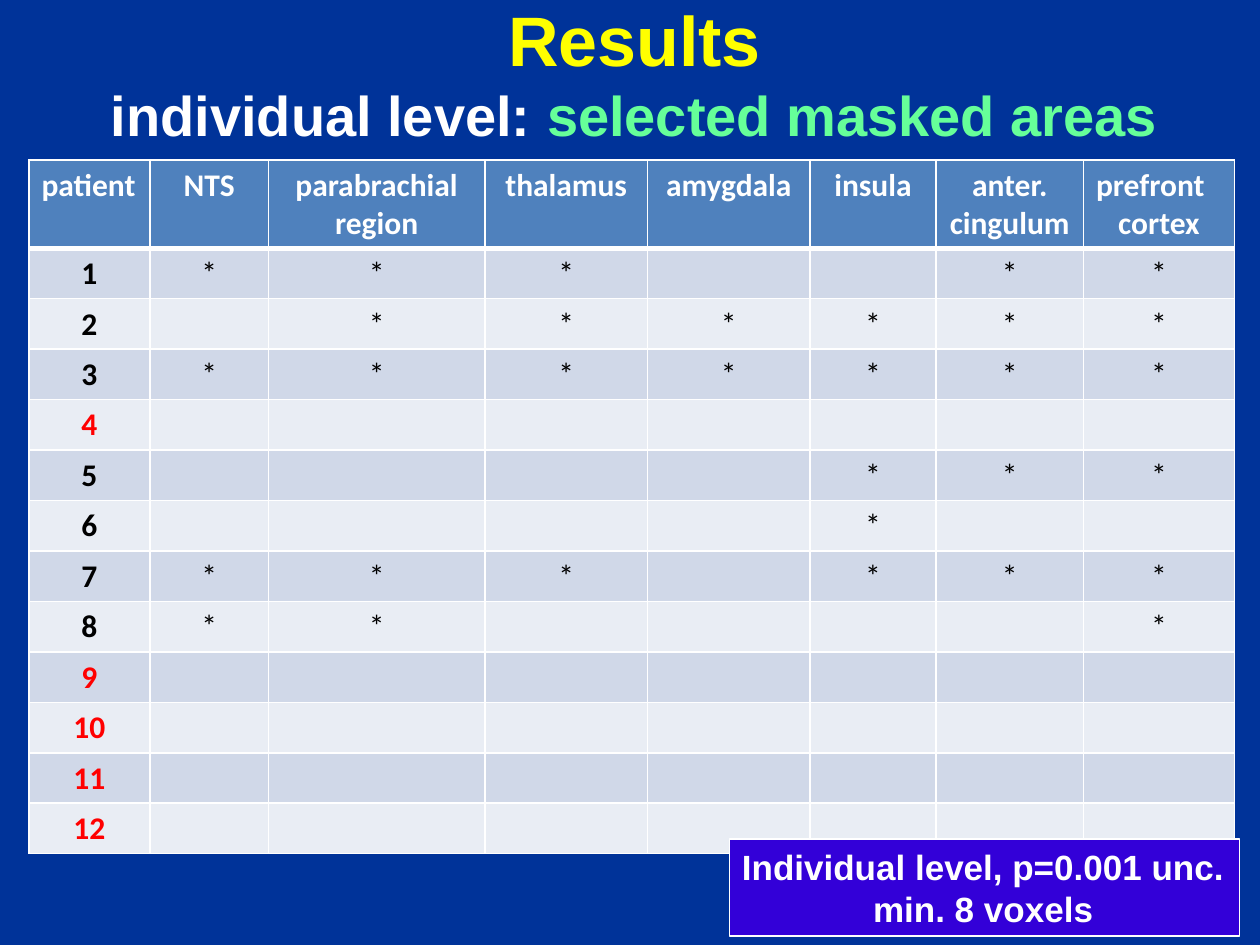
import pptx
import pptx.util
import pptx.dml.color
import pptx.enum.text
import pptx.enum.shapes
import pptx.oxml
import pptx.oxml.ns

# Grid: 100 columns by 75 rows, each a tenth of an inch
UNIT = pptx.util.Inches(0.1)
COLS, ROWS = 100, 75

HUES = {
    "back": "003399", "title": "FFFF00", "white": "FFFFFF",
    "mint": "66FF99", "head": "4F81BD", "odd": "D0D8E8",
    "even": "E9EDF4", "black": "000000", "red": "FF0000",
    "note": "3300D8",
}
ALIGN = pptx.enum.text.PP_ALIGN
ANCHOR = pptx.enum.text.MSO_ANCHOR
SIZING = pptx.enum.text.MSO_AUTO_SIZE

HEADS = ["patient", "NTS", "parabrachial\nregion", "thalamus", "amygdala",
         "insula", "anter.\ncingulum", "prefront\ncortex"]
WIDTHS = [9.6, 9.4, 17.2, 12.9, 12.9, 10, 11.7, 12]
# Columns with a star, for each patient
STARS = {1: [1, 2, 3, 6, 7], 2: [2, 3, 4, 5, 6, 7], 3: [1, 2, 3, 4, 5, 6, 7],
         5: [5, 6, 7], 6: [5], 7: [1, 2, 3, 5, 6, 7], 8: [1, 2, 7]}
COUNT = 12
NONE = [4, 9, 10, 11, 12]
LEFT = ["patient", "prefront"]


def grid(*spans):
    return [round(span * UNIT) for span in spans]


def shade(hue):
    return pptx.dml.color.RGBColor.from_string(HUES[hue])


def apply(item, values):
    for name, value in values.items():
        setattr(item, name, value)


def write(para, text, hue, **values):
    run = para.add_run()
    run.text = text
    apply(run.font, values)
    run.font.color.rgb = shade(hue)


def paint(fill, hue):
    fill.solid()
    fill.fore_color.rgb = shade(hue)


def edge(cell, **widths):
    """Draw white cell borders, widths in points."""
    props = cell._tc.get_or_add_tcPr()
    for side in ("L", "R", "T", "B"):
        wide = pptx.util.Pt(widths.get(side, 1))
        props.append(pptx.oxml.parse_xml(
            f'<a:ln{side} {pptx.oxml.ns.nsdecls("a")} w="{wide}"><a:solidFill>'
            f'<a:srgbClr val="{HUES["white"]}"/></a:solidFill></a:ln{side}>'))


def title(slide, box):
    frame = slide.shapes.add_textbox(*grid(*box)).text_frame
    apply(frame, {"word_wrap": True, "vertical_anchor": ANCHOR.BOTTOM})
    para = frame.paragraphs[0]
    para.alignment = ALIGN.CENTER
    look = {"name": "Arial", "bold": True}
    write(para, "Results", "title", size=pptx.util.Pt(40), **look)
    para.add_line_break()
    look["size"] = pptx.util.Pt(32)
    write(para, "individual level: ", "white", **look)
    write(para, "selected masked areas", "mint", **look)


def fill_cell(cell, text, hue, back, bold, **widths):
    edge(cell, **widths)
    paint(cell.fill, back)
    frame = cell.text_frame
    for spot, line in enumerate(text.split("\n")):
        para = frame.add_paragraph() if spot else frame.paragraphs[0]
        para.alignment = ALIGN.LEFT if line in LEFT else ALIGN.CENTER
        look = {"name": "Calibri", "size": pptx.util.Pt(18), "bold": bold}
        if line:
            write(para, line, hue, **look)
        else:
            apply(para.font, look)


def matrix(slide, box):
    frame = slide.shapes.add_table(COUNT + 1, len(HEADS), *grid(*box))
    table = frame.table
    for col, wide in zip(table.columns, grid(*WIDTHS)):
        col.width = wide
    for spot, row in enumerate(table.rows):
        row.height = grid(3.9 if spot else 6.8)[0]
    frame.height = grid(box[3])[0]

    # Header row
    for col, head in enumerate(HEADS):
        fill_cell(table.cell(0, col), head, "white", "head", True, B=3)

    # One row for each patient
    for row in range(1, COUNT + 1):
        back = "odd" if row % 2 else "even"
        top = 3 if row == 1 else 1
        hue = "red" if row in NONE else "black"
        fill_cell(table.cell(row, 0), str(row), hue, back, True, T=top)
        for col in range(1, len(HEADS)):
            mark = "*" if col in STARS.get(row, []) else ""
            fill_cell(table.cell(row, col), mark, "black", back, False, T=top)


def note(slide, box):
    shape = slide.shapes.add_shape(
        pptx.enum.shapes.MSO_SHAPE.RECTANGLE, *grid(*box))
    shape.shadow.inherit = False
    paint(shape.fill, "note")
    paint(shape.line.fill, "white")
    shape.line.width = pptx.util.Pt(0.75)
    frame = shape.text_frame
    apply(frame, {"word_wrap": False, "vertical_anchor": ANCHOR.TOP,
                  "auto_size": SIZING.SHAPE_TO_FIT_TEXT})
    lines = [("Individual level, p=0.001 unc.", ALIGN.LEFT),
             ("min. 8 voxels", ALIGN.CENTER)]
    for spot, (line, align) in enumerate(lines):
        para = frame.add_paragraph() if spot else frame.paragraphs[0]
        para.alignment = align
        write(para, line, "white", name="Arial", size=pptx.util.Pt(20),
              bold=True)


def main():
    deck = pptx.Presentation()
    deck.slide_width, deck.slide_height = grid(COLS, ROWS)
    slide = deck.slides.add_slide(deck.slide_layouts[6])
    paint(slide.background.fill, "back")
    title(slide, (2.8, 0.5, 95.1, 11.7))
    matrix(slide, (2.3, 12.7, 95.6, 55))
    note(slide, (57.9, 66.6, 40.5, 7.7))
    deck.save("out.pptx")


if __name__ == "__main__":
    main()
